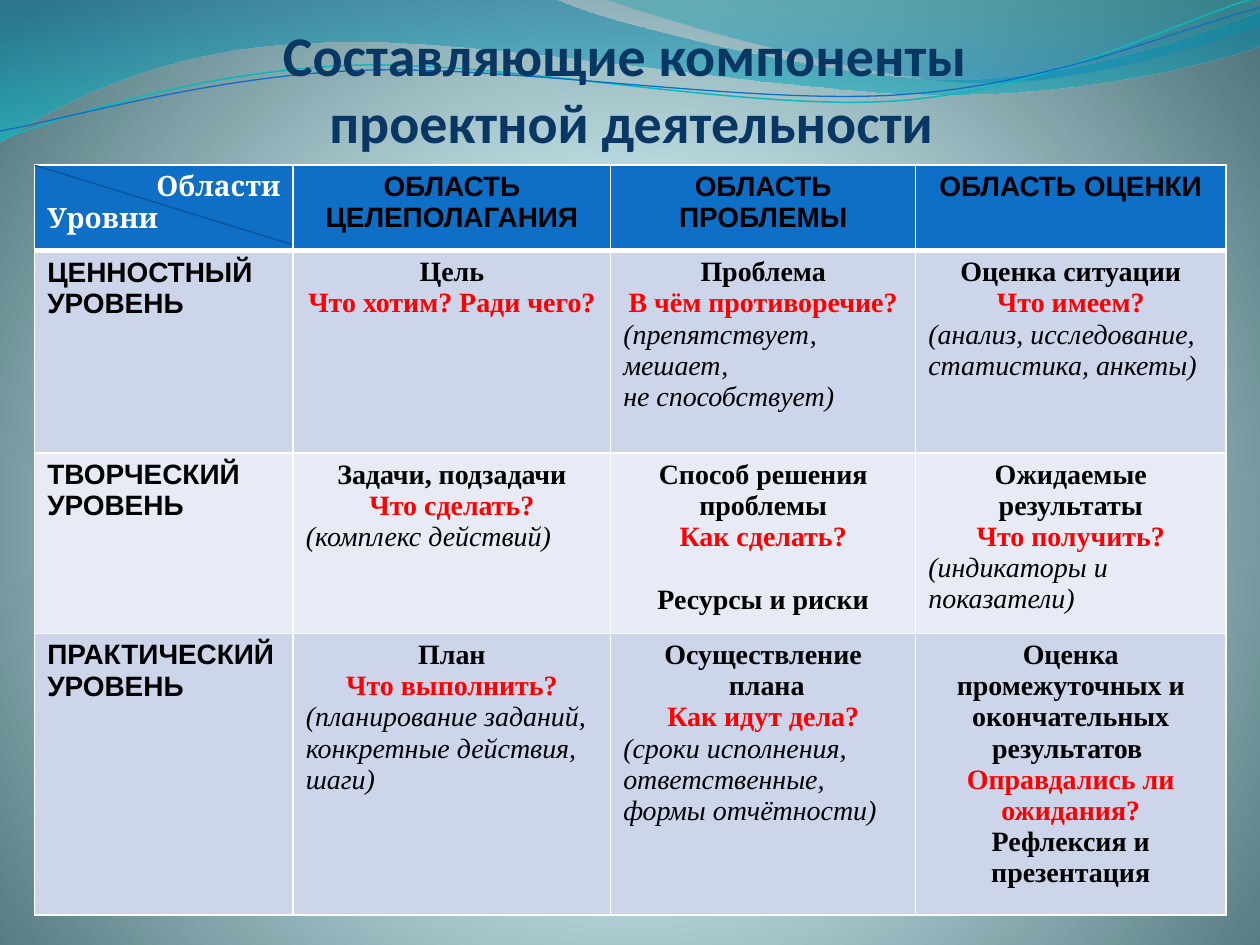
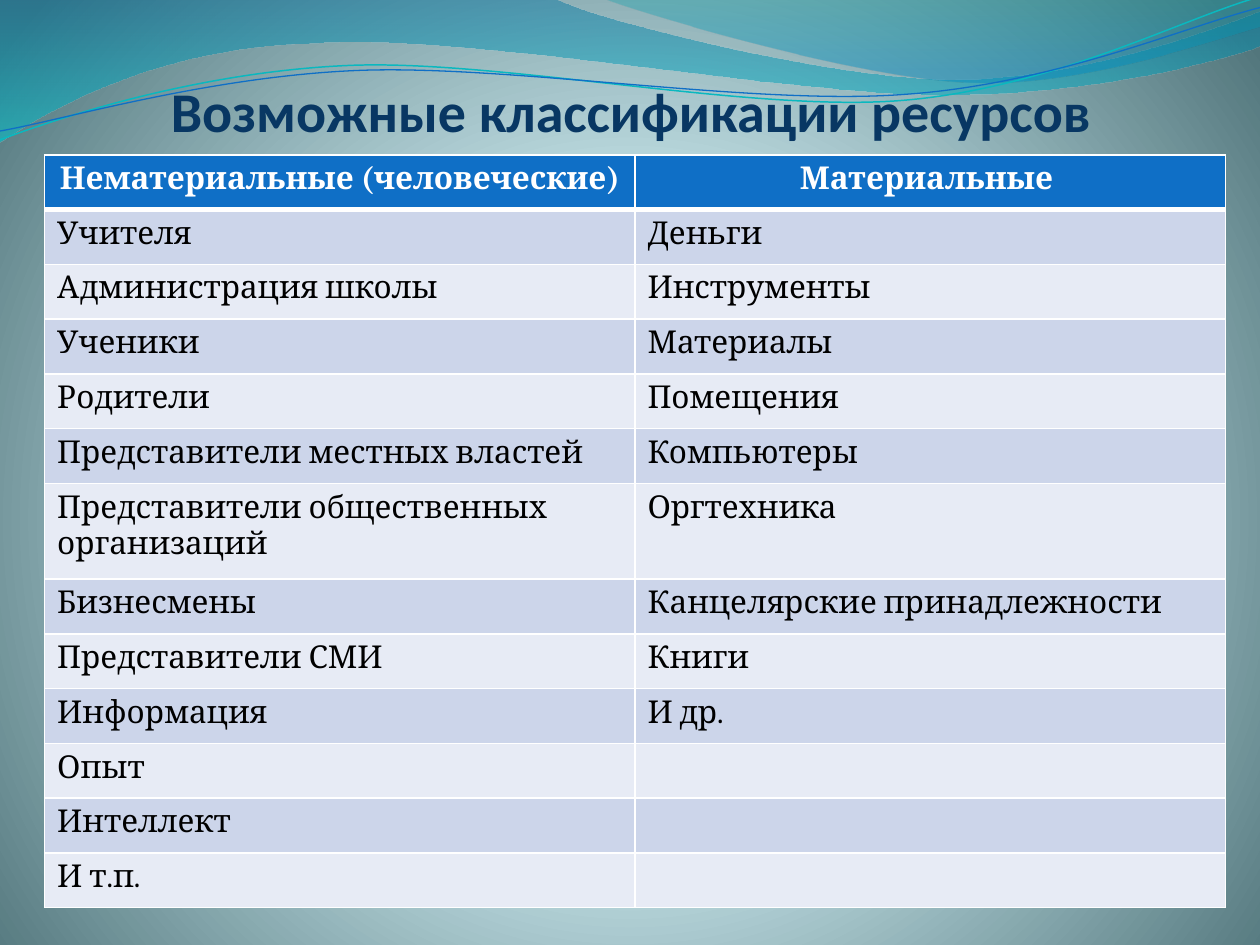
from dataclasses import dataclass
from itertools import zip_longest

from lxml import etree
from pptx import Presentation
from pptx.dml.color import RGBColor
from pptx.enum.shapes import MSO_CONNECTOR
from pptx.enum.text import MSO_ANCHOR, PP_ALIGN
from pptx.oxml.ns import nsdecls, qn
from pptx.util import Cm, Pt

LEFT, MID, RIGHT = PP_ALIGN.LEFT, PP_ALIGN.CENTER, PP_ALIGN.RIGHT
BOTTOM = MSO_ANCHOR.BOTTOM
STRAIGHT = MSO_CONNECTOR.STRAIGHT


@dataclass(frozen=True)
class Theme:
    title: str = "083763"
    head: str = "0F6FC6"
    bands: tuple = ("CCD5EA", "E7EBF5")
    white: str = "FFFFFF"
    black: str = "000000"
    ask: str = "FF0000"
    slash: str = "095295"
    back: tuple = ((0, "DEFBFF", 100), (25, "DDFAFF", 100), (100, "52767C", 100))
    big: int = 32
    list: int = 18
    grid: int = 16
    sans: str = "Calibri"
    label: str = "Arial"
    serif: str = "Cambria"
    body: str = "Times New Roman"


T = Theme()

# Named text formats
HEAD = dict(size=T.list, font=T.serif, color=T.white, bold=True, align=MID)
ITEM = dict(size=T.list, font=T.serif)
AXIS = dict(size=T.grid, font=T.serif, color=T.white, bold=True)
AXIS_R = dict(AXIS, align=RIGHT)
LEVEL = dict(size=T.grid, font=T.label, bold=True)
AREA = dict(LEVEL, align=MID)
TERM = dict(size=T.grid, font=T.body, bold=True, align=MID)
APART = dict(TERM, before=18)
ASK = dict(TERM, color=T.ask)
NOTE = dict(size=T.grid, font=T.body, italic=True)

# Each cell is a list of (text, format)
PARTS = [
    [[(" Области", AXIS_R), ("Уровни", AXIS)],
     [("ОБЛАСТЬ ЦЕЛЕПОЛАГАНИЯ", AREA)],
     [("ОБЛАСТЬ ПРОБЛЕМЫ", AREA)],
     [("ОБЛАСТЬ ОЦЕНКИ", AREA)]],
    [[("ЦЕННОСТНЫЙ УРОВЕНЬ", LEVEL)],
     [("Цель", TERM), ("Что хотим? Ради чего?", ASK)],
     [("Проблема", TERM), ("В чём противоречие?", ASK),
      ("(препятствует, мешает,", NOTE), ("не способствует)", NOTE)],
     [("Оценка ситуации", TERM), ("Что имеем?", ASK),
      ("(анализ, исследование, статистика, анкеты)", NOTE)]],
    [[("ТВОРЧЕСКИЙ УРОВЕНЬ", LEVEL)],
     [("Задачи, подзадачи", TERM), ("Что сделать?", ASK),
      ("(комплекс действий)", NOTE)],
     [("Способ решения проблемы", TERM), ("Как сделать?", ASK),
      ("Ресурсы и риски", APART)],
     [("Ожидаемые результаты", TERM), ("Что получить?", ASK),
      ("(индикаторы и показатели)", NOTE)]],
    [[("ПРАКТИЧЕСКИЙ УРОВЕНЬ", LEVEL)],
     [("План", TERM), ("Что выполнить?", ASK),
      ("(планирование заданий, конкретные действия, шаги)", NOTE)],
     [("Осуществление", TERM), (" плана", TERM), ("Как идут дела?", ASK),
      ("(сроки исполнения, ответственные, формы отчётности)", NOTE)],
     [("Оценка промежуточных и окончательных результатов ", TERM),
      ("Оправдались ли ожидания?", ASK),
      ("Рефлексия и презентация", TERM)]],
]

PEOPLE = ["Нематериальные (человеческие)", "Учителя", "Администрация школы",
          "Ученики", "Родители", "Представители местных властей",
          "Представители общественных организаций", "Бизнесмены",
          "Представители СМИ", "Информация", "Опыт", "Интеллект", "И т.п."]
GOODS = ["Материальные ", "Деньги", "Инструменты", "Материалы", "Помещения",
         "Компьютеры", "Оргтехника", "Канцелярские принадлежности", "Книги",
         "И др."]

# Wave outlines in tenths of the slide width: a start point, then
# line ends (2 numbers) or Bezier curves (6 numbers)
UNIT = Cm(2.54)
BANDS = [
    (((0, "0074A1", 45), (100, "00C6CF", 55)),
     [(0, 0), (4.4, -0.01), (4.76, 0.17, 6.64, 0.63, 7.58, 0.63),
      (8.53, 0.63, 9.58, 0.26, 10, 0.09), (10.01, 0.36),
      (9.83, 0.44, 8.7, 0.76, 7.46, 0.75),
      (6.22, 0.75, 3.82, 0.28, 2.57, 0.34),
      (1.29, 0.36, 0.46, 0.83, -0.01, 1.13), (0, 0)]),
    (((0, "00A1A9", 30), (80, "008BBF", 45)),
     [(4.79, -0.01), (5.09, 0.11, 6.82, 0.62, 7.69, 0.65),
      (8.56, 0.69, 9.61, 0.32, 10, 0.21), (10, 0), (4.79, -0.01)]),
]
CURVES = [
    ("0AB8BF", 0.85,
     [(0, 1.11), (0.48, 0.93, 1.58, 0.57, 2.77, 0.52),
      (3.95, 0.47, 5.93, 0.89, 7.13, 0.8),
      (8.33, 0.71, 9.38, 0.15, 9.98, -0.02)]),
    ("0F6FC6", 0.75,
     [(0, 1.04), (0.47, 0.96, 1.64, 0.61, 2.83, 0.56),
      (4.03, 0.51, 5.97, 0.84, 7.17, 0.75),
      (8.36, 0.67, 9.41, 0.21, 10, 0.06)]),
]


def rgb(code):
    return RGBColor.from_string(code)


def write(frame, text, size, font, color=T.black, bold=False, italic=False,
          align=LEFT, before=0):
    """Add one formatted paragraph, using the empty first one if it is free."""
    para = frame.add_paragraph() if frame.text else frame.paragraphs[0]
    para.text = text
    para.alignment = align
    if before:
        para.space_before = Pt(before)
    for run in para.runs:
        look = run.font
        look.size, look.name = Pt(size), font
        look.bold, look.italic = bold, italic
        look.color.rgb = rgb(color)
    end = etree.SubElement(para.runs[-1].font and para._p, qn("a:endParaRPr"),
                           sz=str(size * 100))
    etree.SubElement(end, qn("a:latin"), typeface=font)


def blend(holder, stops, way):
    """Swap the solid fill in holder for a gradient; stops give opacity."""
    marks = "".join(
        f'<a:gs pos="{pos * 1000}"><a:srgbClr val="{code}">'
        f'<a:alpha val="{alpha * 1000}"/></a:srgbClr></a:gs>'
        for pos, code, alpha in stops)
    grad = etree.fromstring(
        f'<a:gradFill {nsdecls("a")} rotWithShape="1">'
        f'<a:gsLst>{marks}</a:gsLst>{way}</a:gradFill>')
    holder.replace(holder.find(qn("a:solidFill")), grad)


def outline(slide, route, close):
    """Draw a route through all its points, then bend its curved legs."""
    pts = [(leg[i] * UNIT, leg[i + 1] * UNIT)
           for leg in route for i in range(0, len(leg), 2)]
    pen = slide.shapes.build_freeform(*pts[0])
    pen.add_line_segments(pts[1:], close=close)
    shape = pen.convert_to_shape()
    shape.shadow.inherit = False
    lines = iter(list(shape.element.iter(qn("a:lnTo"))))
    for leg in route[1:]:
        first = next(lines)
        if len(leg) == 6:
            first.tag = qn("a:cubicBezTo")
            for line in (next(lines), next(lines)):
                first.append(line[0])
                line.getparent().remove(line)
    return shape


def start(deck, title, height):
    """Add a slide with the waves and its title."""
    slide = deck.slides.add_slide(deck.slide_layouts[6])
    for stops, route in BANDS:
        band = outline(slide, route, True)
        band.line.fill.background()
        band.fill.solid()
        blend(band.element.spPr, stops, '<a:lin ang="5400000" scaled="1"/>')
    for code, width, route in CURVES:
        curve = outline(slide, route, False)
        curve.fill.background()
        curve.line.color.rgb = rgb(code)
        curve.line.width = Pt(width)
    box = slide.shapes.add_textbox(Cm(1.3), Cm(0.91), Cm(22.86), Cm(height))
    frame = box.text_frame
    frame.word_wrap = True
    frame.vertical_anchor = BOTTOM
    frame.margin_left = frame.margin_right = frame.margin_bottom = 0
    write(frame, title, size=T.big, font=T.sans, color=T.title, bold=True,
          align=MID)
    return slide


def edge(cell, top, low):
    """Give a cell white borders; top and low are widths in points."""
    props = cell._tc.get_or_add_tcPr()
    for spot, (side, width) in enumerate(
            (("L", 1), ("R", 1), ("T", top), ("B", low))):
        props.insert(spot, etree.fromstring(
            f'<a:ln{side} {nsdecls("a")} w="{Pt(width)}"><a:solidFill>'
            f'<a:srgbClr val="{T.white}"/></a:solidFill></a:ln{side}>'))


def grid(slide, left, top, cols, rows, cells):
    table = slide.shapes.add_table(
        len(rows), len(cols), Cm(left), Cm(top),
        Cm(sum(cols)), Cm(sum(rows))).table
    for col, width in zip(table.columns, cols):
        col.width = Cm(width)
    for r, (row, height) in enumerate(zip(table.rows, rows)):
        row.height = Cm(height)
        for cell, lines in zip(row.cells, cells[r]):
            cell.fill.solid()
            cell.fill.fore_color.rgb = rgb(T.bands[(r - 1) % 2] if r else T.head)
            edge(cell, 3 if r == 1 else 1, 1 if r else 3)
            for text, form in lines:
                write(cell.text_frame, text, **form)


def parts(deck):
    slide = start(deck, "Составляющие компоненты \nпроектной деятельности", 2.21)
    left, top = 0.7, 3.33
    grid(slide, left, top, [5.21, 6.4, 6.15, 6.25], [1.72, 4.08, 3.43, 5.36],
         PARTS)
    slash = slide.shapes.add_connector(
        STRAIGHT, Cm(left), Cm(top), Cm(left + 5.19), Cm(top + 1.6))
    slash.line.color.rgb = rgb(T.slash)
    slash.line.width = Pt(0.75)
    etree.SubElement(slash.element.spPr, qn("a:effectLst"))


def stock(deck):
    slide = start(deck, "Возможные классификации ресурсов", 1.98)
    cells = [[[(text, ITEM if r else HEAD)] if text else [] for text in pair]
             for r, pair in enumerate(zip_longest(PEOPLE, GOODS))]
    full, tall = 15.18, 1.93
    rows = [(full - tall) / (len(cells) - 1)] * len(cells)
    rows[6] = tall
    grid(slide, 0.9, 3.12, [11.9] * 2, rows, cells)


def main():
    deck = Presentation()
    deck.slide_width, deck.slide_height = Cm(25.4), Cm(19.05)
    master = deck.slide_master
    master.background.fill.solid()
    blend(master.element.find(".//" + qn("p:bgPr")), T.back,
          '<a:path path="circle"><a:fillToRect l="10000" t="110000" '
          'r="10000" b="100000"/></a:path>')
    parts(deck)
    stock(deck)
    deck.save("out.pptx")


if __name__ == "__main__":
    main()
